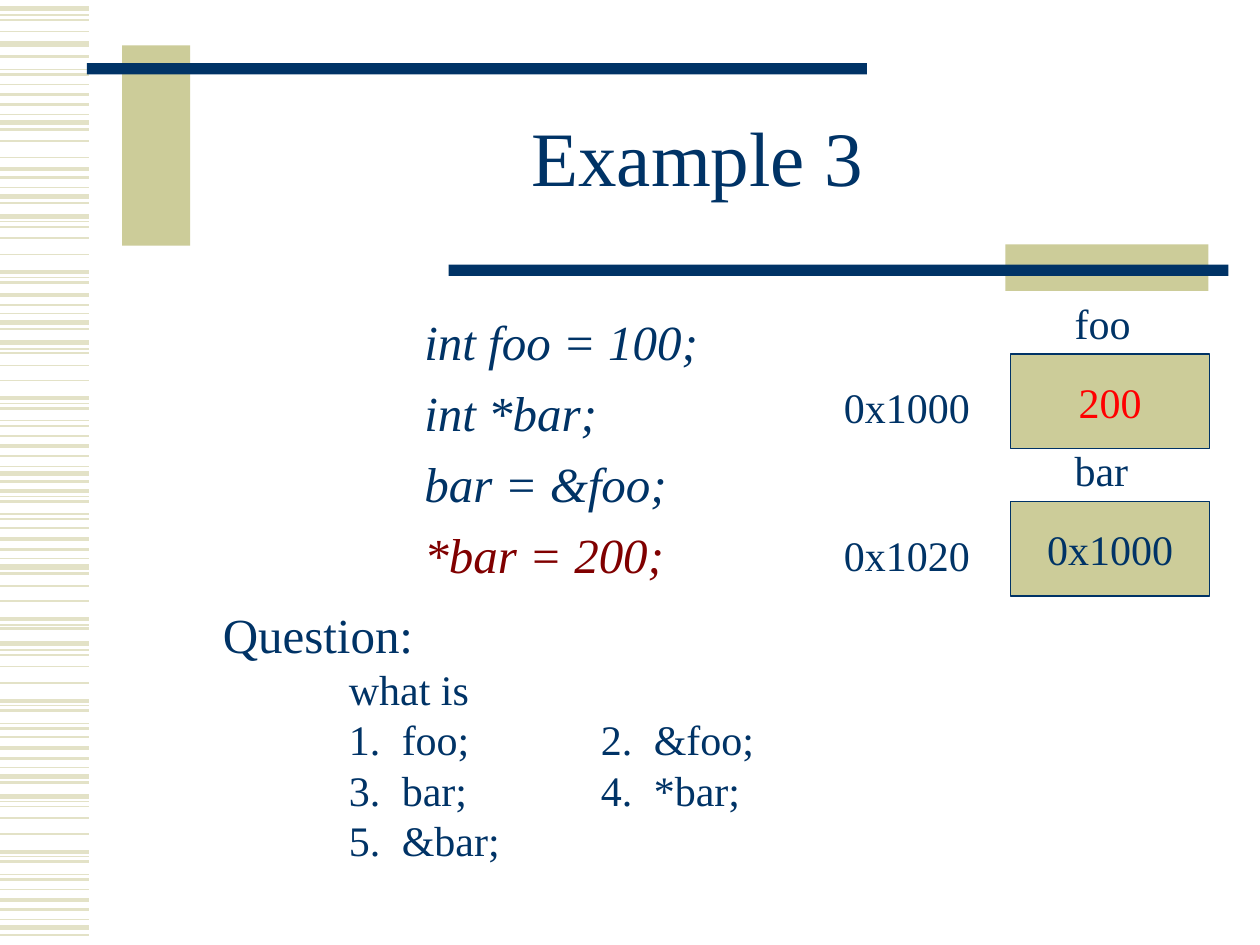
from lxml import etree
from pptx import Presentation
from pptx import util as u
from pptx.dml.color import RGBColor
from pptx.enum import shapes, text
from pptx.oxml import ns
from pptx.util import Inches

COLORS = {"navy": "003366", "khaki": "CCCC99", "stripe": "E3E2C7",
          "maroon": "800000", "red": "FF0000"}
FONT = "Times New Roman"

# Heights of the margin stripes in inches, by line weight in points
STRIPES = {
    0.75: (0.12, 0.55, 0.91, 1.49, 1.76, 2.2, 2.49, 2.77, 3.2, 3.34, 3.7, 3.94,
           4.08, 4.43, 4.96, 5.16, 5.6, 5.74, 6.09, 6.36, 6.8, 6.94, 7.3),
    1: (0.16, 0.25, 0.67, 1.12, 1.25, 1.8, 1.89, 2.02, 2.8, 2.9, 3.02, 3.46,
        4.19, 4.65, 4.77, 5.2, 5.29, 5.42, 5.85, 6.4, 6.49, 6.62, 7.06),
    1.5: (0.45, 0.59, 0.83, 1.03, 1.41, 1.61, 2.24, 2.42, 2.61, 3.24, 3.38,
          3.62, 3.82, 3.98, 4.12, 4.36, 4.55, 4.99, 5.64, 5.78, 6.02, 6.21,
          6.84, 6.98, 7.22, 7.42),
    2.25: (0.75, 1.34, 2.16, 2.34, 3.16, 3.54, 3.9, 4.28, 4.91, 5.56, 5.94,
           6.76, 7.14),
    3: (0.07, 0.35, 0.97, 1.56, 1.72, 2.56, 2.72, 3.76, 4.5, 5.11, 6.16, 6.32,
        7.36),
}


def color(name):
    return RGBColor.from_string(COLORS[name])


def format_runs(paragraph, size, color_name="navy", italic=False):
    for run in paragraph.runs:
        run.font.name = FONT
        run.font.size = u.Pt(size)
        run.font.italic = italic
        run.font.color.rgb = color(color_name)


def add_bar(slide, left, top, width, height, fill, outline=None):
    bar = slide.shapes.add_shape(shapes.MSO_SHAPE.RECTANGLE, Inches(left),
                                 Inches(top), Inches(width), Inches(height))
    bar.shadow.inherit = False
    bar.fill.solid()
    bar.fill.fore_color.rgb = color(fill)
    if outline:
        bar.line.color.rgb = color(outline)
        bar.line.width = u.Pt(0.75)
    else:
        bar.line.fill.background()
    return bar


def add_text(slide, left, top, width, height, lines, wrap=True):
    box = slide.shapes.add_textbox(Inches(left), Inches(top),
                                   Inches(width), Inches(height))
    box.text_frame.word_wrap = wrap
    box.text_frame.text = "\n".join(lines)
    return box.text_frame.paragraphs


def add_stripes(slide, left, top, width):
    for weight, offsets in STRIPES.items():
        for offset in offsets:
            y = Inches(top + offset)
            line = slide.shapes.add_connector(
                shapes.MSO_CONNECTOR.STRAIGHT, Inches(left), y,
                Inches(left + width), y)
            line.line.color.rgb = color("stripe")
            line.line.width = u.Pt(weight)
            etree.SubElement(line._element.spPr, ns.qn("a:effectLst"))


def add_frame(slide):
    add_bar(slide, 0.97, 0.36, 0.54, 1.59, "khaki")
    add_bar(slide, 0.69, 0.5, 6.19, 0.09, "navy")
    add_bar(slide, 7.98, 1.94, 1.61, 0.37, "khaki")
    add_bar(slide, 3.56, 2.1, 6.19, 0.09, "navy")


def add_title(slide, left, top, width, height):
    title = slide.shapes.title
    title.left, title.top = Inches(left), Inches(top)
    title.width, title.height = Inches(width), Inches(height)
    title.text_frame.text = "Example 3"
    title.text_frame.vertical_anchor = text.MSO_ANCHOR.MIDDLE
    paragraph = title.text_frame.paragraphs[0]
    paragraph.alignment = text.PP_ALIGN.CENTER
    paragraph.line_spacing = 0.85
    format_runs(paragraph, 44)


def add_code(slide, left, top, width, height):
    lines = ["int foo = 100;", "int *bar;", "bar = &foo;", "*bar = 200;"]
    paragraphs = add_text(slide, left, top, width, height, lines)
    for paragraph in paragraphs:
        paragraph.space_before = u.Pt(7)
        paragraph._p.get_or_add_pPr().set("marL", str(Inches(2.38)))
        format_runs(paragraph, 28, italic=True)
    format_runs(paragraphs[-1], 28, "maroon", italic=True)


def add_question(slide, left, top, width, height):
    lines = ["Question:", "\twhat is", "\t1.\tfoo;\t2.\t&foo;",
             "\t3.\tbar;\t4.\t*bar;", "\t5.\t&bar;"]
    paragraphs = add_text(slide, left, top, width, height, lines)
    format_runs(paragraphs[0], 28)
    for paragraph in paragraphs[1:]:
        format_runs(paragraph, 24)
        # Two columns, each with a stop for the number and one for its text
        tabs = etree.SubElement(paragraph._p.get_or_add_pPr(), ns.qn("a:tabLst"))
        for stop in (1, 1.42, 3, 3.42):
            etree.SubElement(tabs, ns.qn("a:tab"), pos=str(Inches(stop)), algn="l")


def add_variable(slide, left, top, name, address, value, value_color="navy"):
    """Memory cell with its name above and its address at the left."""
    labels = ((name, left + 1.83, top, 0.65), (address, left, top + 0.67, 1.2))
    for label, x, y, width in labels:
        paragraphs = add_text(slide, x, y, width, 0.5, [label], wrap=False)
        format_runs(paragraphs[0], 24)
    cell = add_bar(slide, left + 1.42, top + 0.5, 1.58, 0.75, "khaki", "navy")
    cell.text_frame.word_wrap = False
    cell.text_frame.text = value
    cell.text_frame.vertical_anchor = text.MSO_ANCHOR.MIDDLE
    paragraph = cell.text_frame.paragraphs[0]
    paragraph.alignment = text.PP_ALIGN.CENTER
    format_runs(paragraph, 24, value_color)


def main():
    presentation = Presentation()
    presentation.slide_width, presentation.slide_height = Inches(10), Inches(7.5)
    slide = presentation.slides.add_slide(presentation.slide_layouts[5])

    # Decoration
    add_stripes(slide, 0, 0, 0.71)
    add_frame(slide)

    # Title, code and question
    add_title(slide, 1.5, 0.67, 8.07, 1.25)
    add_code(slide, 0.89, 2.42, 8.7, 4.24)
    add_question(slide, 1.67, 4.75, 6.35, 2.56)

    # Memory diagram
    add_variable(slide, 6.6, 2.31, "foo", "0x1000", "200", "red")
    add_variable(slide, 6.6, 3.48, "bar", "0x1020", "0x1000")

    presentation.save("out.pptx")


if __name__ == "__main__":
    main()
